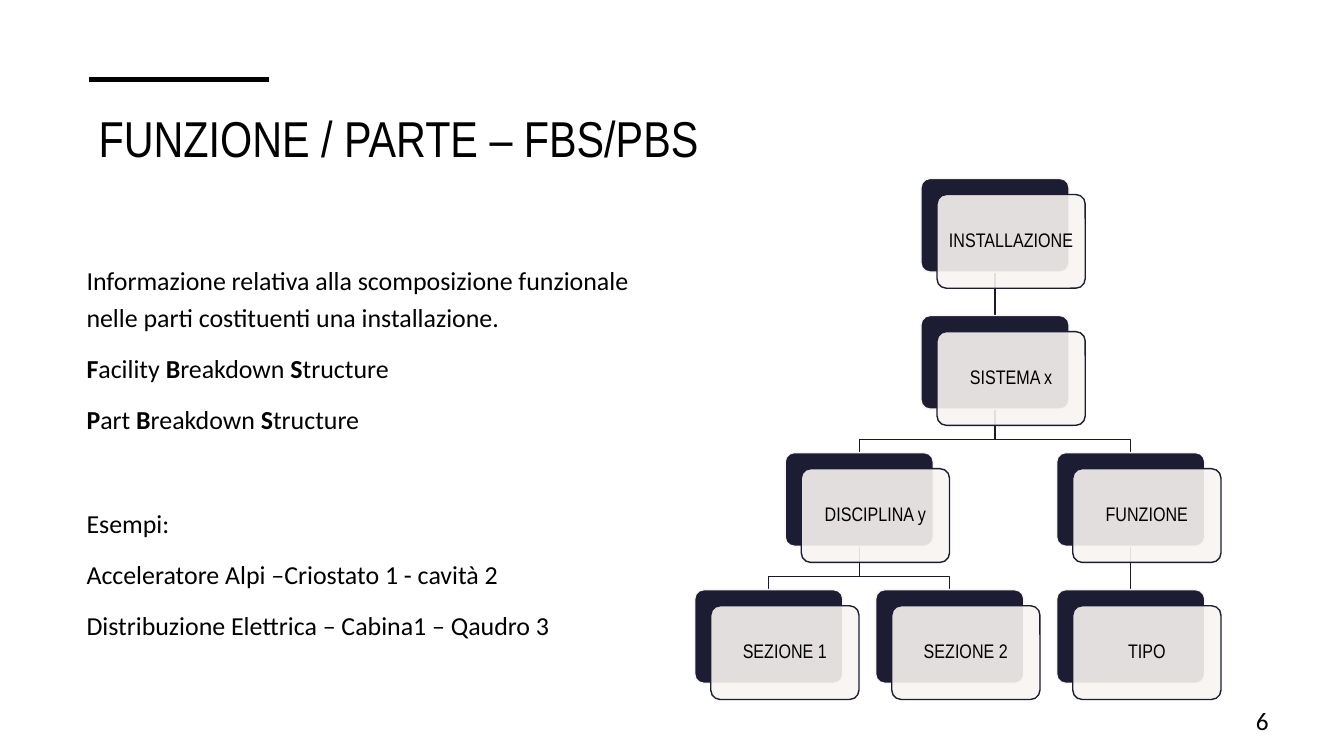
from pptx import Presentation
from pptx.dml.color import RGBColor
from pptx.enum.shapes import MSO_CONNECTOR, MSO_SHAPE
from pptx.enum.text import MSO_ANCHOR, PP_ALIGN
from pptx.oxml.ns import qn
from pptx.util import Inches, Pt
from lxml.etree import SubElement

COLORS = {"ink": "000000", "navy": "1C1C32", "cream": "F8F4F1", "link": "19192D"}
TITLE_FONT, BODY_FONT = "Arial Narrow", "Calibri"

# Breakdown tree geometry, in inches
TREE_LEFT, TREE_TOP = 6.89, 1.77
COLUMN_STEP, ROW_STEP = 1.795, 1.36
CARD_WIDTH, CARD_HEIGHT, CARD_OFFSET = 1.47, 0.93, 0.16
ELBOW_DROP = 0.3

# Label: (column, row, parent)
NODES = {
    "INSTALLAZIONE": (1.25, 0, None),
    "SISTEMA x": (1.25, 1, "INSTALLAZIONE"),
    "DISCIPLINA y": (0.5, 2, "SISTEMA x"),
    "SEZIONE 1": (0, 3, "DISCIPLINA y"),
    "SEZIONE 2": (1, 3, "DISCIPLINA y"),
    "FUNZIONE": (2, 2, "SISTEMA x"),
    "TIPO": (2, 3, "FUNZIONE"),
}

# Text between asterisks is bold; the number is the space before
BODY = [
    ("Informazione relativa alla scomposizione funzionale "
     "nelle parti costituenti una installazione.", 10),
    ("*F*acility *B*reakdown *S*tructure", 10),
    ("*P*art *B*reakdown *S*tructure", 10),
    ("Esempi:", 47),
    ("Acceleratore Alpi –Criostato 1 - cavità 2", 10),
    ("Distribuzione Elettrica – Cabina1 – Qaudro 3", 10),
]


def color(name):
    return RGBColor.from_string(COLORS[name])


def node_corner(label):
    column, row, _ = NODES[label]
    return TREE_LEFT + column * COLUMN_STEP, TREE_TOP + row * ROW_STEP


class SlideBuilder:
    def __init__(self, page):
        self.page = page

    def style_paragraph(self, para, font, size, align=PP_ALIGN.LEFT):
        para.alignment = align
        para.font.name = font
        para.font.size = Pt(size)
        para.font.color.rgb = color("ink")

    def text(self, left, top, width, height, lines, font, size,
             align=PP_ALIGN.LEFT, anchor=MSO_ANCHOR.MIDDLE, line_spacing=1.0):
        box = self.page.shapes.add_textbox(
            Inches(left), Inches(top), Inches(width), Inches(height))
        frame = box.text_frame
        frame.word_wrap = True
        frame.vertical_anchor = anchor
        for index, (line, space) in enumerate(lines):
            para = frame.add_paragraph() if index else frame.paragraphs[0]
            self.style_paragraph(para, font, size, align)
            para.line_spacing = line_spacing
            para.space_before = Pt(space)
            for part, words in enumerate(line.split("*")):
                if words:
                    span = para.add_run()
                    span.text = words
                    if part % 2:
                        span.font.bold = True

    def rule(self, left, right, y, weight):
        line = self.page.shapes.add_connector(
            MSO_CONNECTOR.STRAIGHT, Inches(left), Inches(y), Inches(right), Inches(y))
        line.line.color.rgb = color("ink")
        line.line.width = Pt(weight)
        SubElement(line._element.spPr, qn("a:effectLst"))

    def branch(self, parent, child):
        parent_left, parent_top = node_corner(parent)
        child_left, child_top = node_corner(child)
        start_x, end_x = parent_left + CARD_WIDTH / 2, child_left + CARD_WIDTH / 2
        start_y = parent_top + CARD_HEIGHT
        points = [(end_x, child_top)]
        if start_x != end_x:
            elbow_y = start_y + ELBOW_DROP
            points = [(start_x, elbow_y), (end_x, elbow_y)] + points
        builder = self.page.shapes.build_freeform(Inches(start_x), Inches(start_y))
        builder.add_line_segments(
            [(Inches(x), Inches(y)) for x, y in points], close=False)
        path = builder.convert_to_shape()
        path.shadow.inherit = False
        path.fill.background()
        path.line.color.rgb = color("link")
        path.line.width = Pt(1)

    def card(self, left, top, fill, outline):
        card = self.page.shapes.add_shape(
            MSO_SHAPE.ROUNDED_RECTANGLE, Inches(left), Inches(top),
            Inches(CARD_WIDTH), Inches(CARD_HEIGHT))
        card.adjustments[0] = 0.1
        card.shadow.inherit = False
        card.fill.solid()
        card.fill.fore_color.rgb = color(fill)
        card.line.color.rgb = color(outline)
        card.line.width = Pt(1)
        return card

    def node(self, label):
        left, top = node_corner(label)
        self.card(left, top, "navy", "cream")
        front = self.card(left + CARD_OFFSET, top + CARD_OFFSET, "cream", "navy")
        tint = front._element.spPr.find(qn("a:solidFill"))[0]
        SubElement(tint, qn("a:alpha")).set("val", "90000")
        frame = front.text_frame
        frame.word_wrap = True
        frame.vertical_anchor = MSO_ANCHOR.MIDDLE
        frame.margin_left = frame.margin_right = Inches(0.06)
        frame.margin_top = frame.margin_bottom = Inches(0.06)
        para = frame.paragraphs[0]
        para.text = label
        para.line_spacing = 0.9
        self.style_paragraph(para, TITLE_FONT, 14, PP_ALIGN.CENTER)


def main():
    deck = Presentation()
    deck.slide_width, deck.slide_height = Inches(13.33), Inches(7.5)
    slide = SlideBuilder(deck.slides.add_slide(deck.slide_layouts[6]))

    # Heading
    slide.rule(0.88, 2.67, 0.79, 3.5)
    slide.text(0.88, 0.98, 6.57, 0.76, [("FUNZIONE / PARTE – FBS/PBS", 0)],
               TITLE_FONT, 36)

    # Breakdown tree: branches lie behind the cards
    for label, (_, _, parent) in NODES.items():
        if parent:
            slide.branch(parent, label)
    for label in NODES:
        slide.node(label)

    # Explanation and page number
    slide.text(0.76, 2.51, 5.92, 4.01, BODY, BODY_FONT, 18.5,
               anchor=MSO_ANCHOR.TOP, line_spacing=1.2)
    slide.text(11.94, 6.95, 0.74, 0.4, [("6", 0)], BODY_FONT, 18, PP_ALIGN.RIGHT)

    deck.save("out.pptx")


if __name__ == "__main__":
    main()
